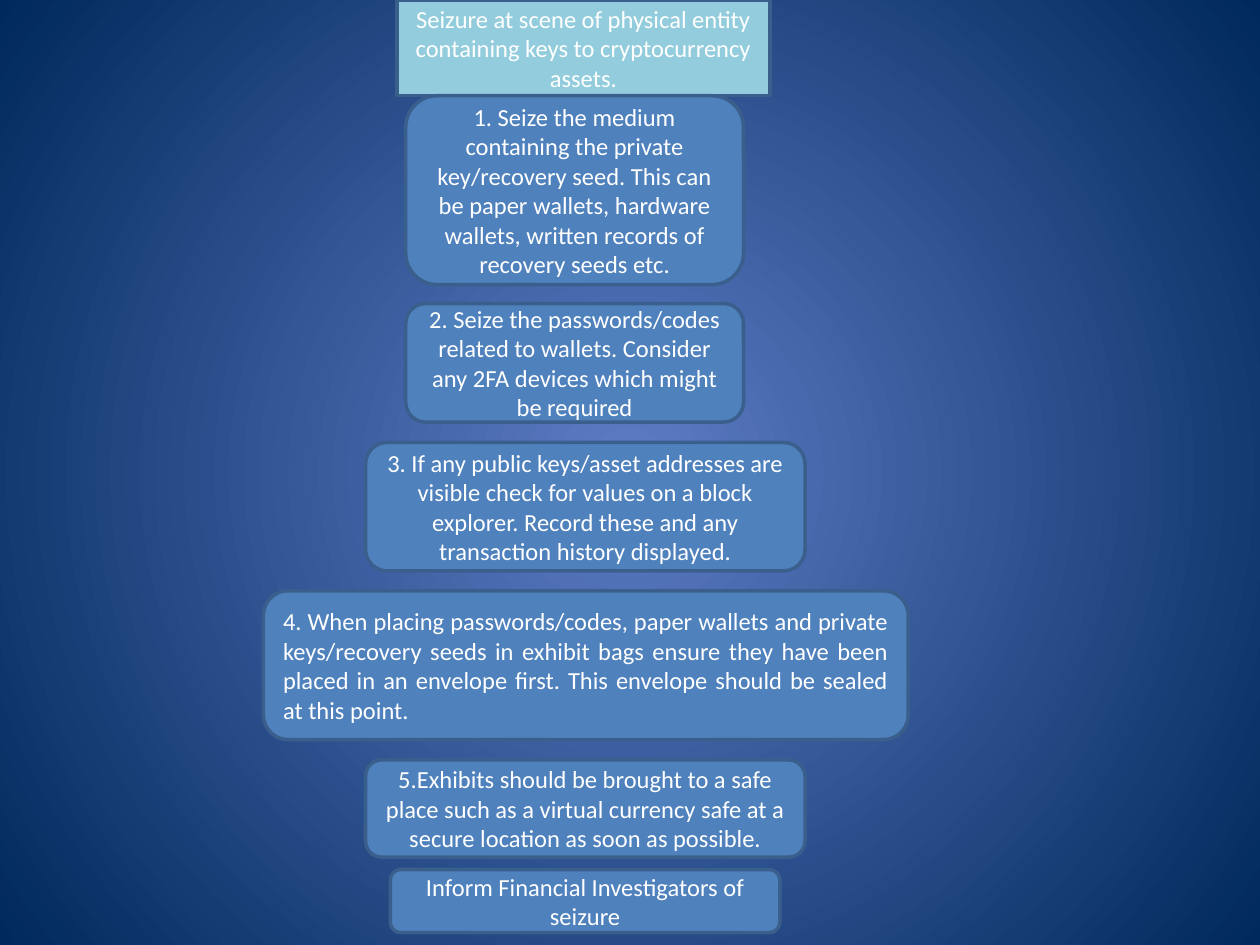
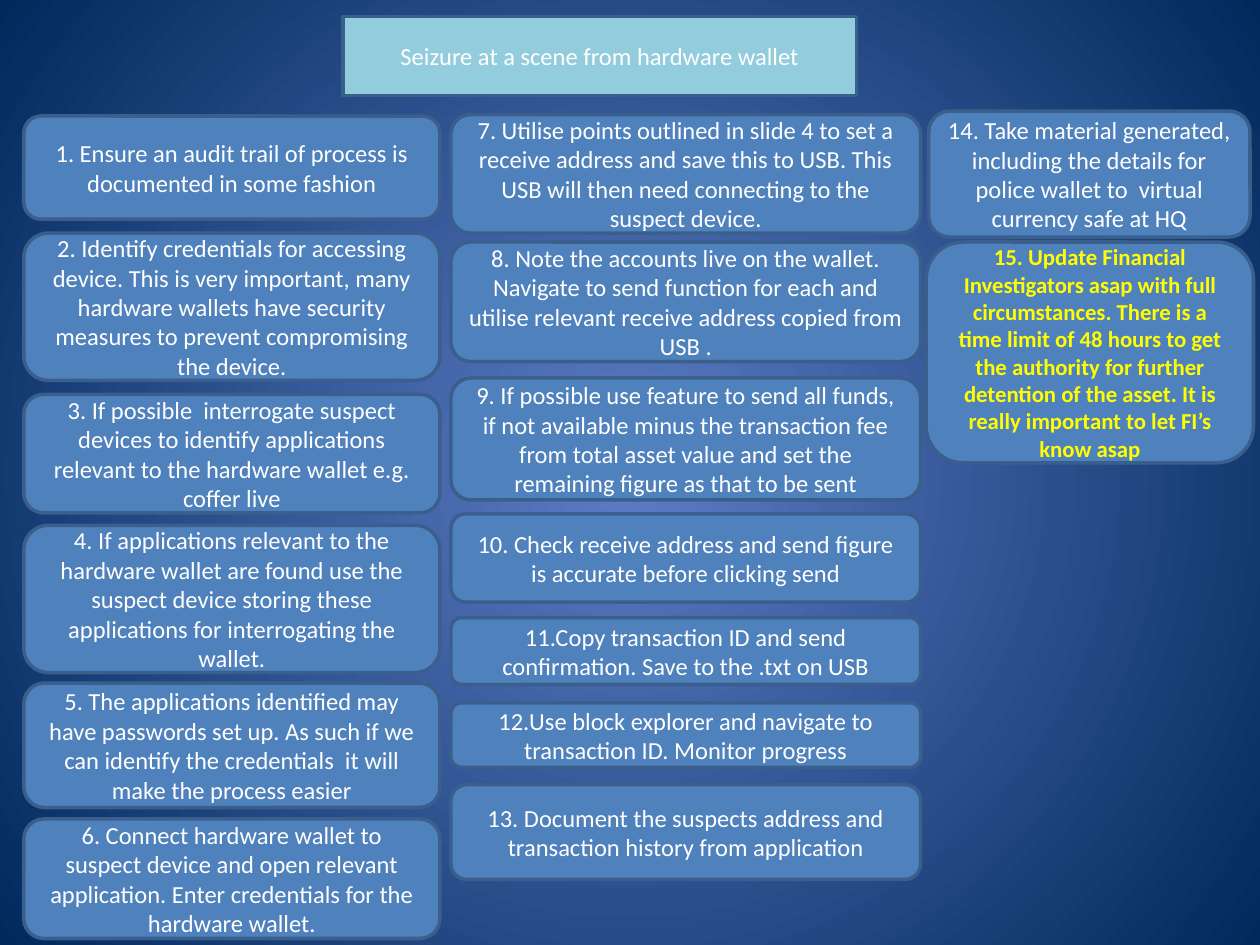
from dataclasses import dataclass

from lxml.etree import SubElement
from pptx import Presentation
from pptx.dml.color import RGBColor
from pptx.enum.shapes import MSO_SHAPE
from pptx.enum.text import MSO_ANCHOR, MSO_AUTO_SIZE, PP_ALIGN
from pptx.oxml.ns import qn
from pptx.util import Cm, Pt


@dataclass(frozen=True)
class Theme:
    font: str = "Calibri"
    body_size: float = 14
    alert_size: float = 13
    line_width: float = 2
    glow: str = "5E7CC5"
    navy: str = "00295C"
    heading: str = "93CDDD"
    step: str = "4F81BD"
    outline: str = "3A5F8C"
    text: str = "FFFFFF"
    alert: str = "FFFF00"


THEME = Theme()
TITLE_ONLY = 5

# Slide 1: left, top, width, height in cm, then wording
SCENE_STEPS = [
    (8.18, 1.93, 6.81, 3.81, "1. Seize the medium containing the private key/recovery seed. "
     "This can be paper wallets, hardware wallets, written records of recovery seeds etc."),
    (8.18, 6.12, 6.81, 2.39, "2. Seize the passwords/codes related to wallets. "
     "Consider any 2FA devices which might be required"),
    (7.37, 8.92, 8.86, 2.59, "3. If any public keys/asset addresses are visible check for values "
     "on a block explorer. Record these and any transaction history displayed."),
    (5.31, 11.91, 13, 3, "4. When placing passwords/codes, paper wallets and private "
     "keys/recovery seeds in exhibit bags ensure they have been placed in an envelope first. "
     "This envelope should be sealed at this point."),
    (7.37, 15.32, 8.86, 1.96, "5.Exhibits should be brought to a safe place such as a virtual "
     "currency safe at a secure location as soon as possible."),
    (7.87, 17.53, 7.85, 1.27, "Inform Financial Investigators of seizure"),
]
JUSTIFIED_STEP = 3

# Slide 2: top and height in cm, then wording, for each column
ACCESS_STEPS = [
    (2.34, 2.08, "1. Ensure an audit trail of process is documented in some fashion"),
    (4.7, 2.97, "2. Identify credentials for accessing device. This is very important, many "
     "hardware wallets have security measures to prevent compromising the device."),
    (7.95, 2.39, "3. If possible  interrogate suspect devices to identify applications "
     "relevant to the hardware wallet e.g. coffer live"),
    (10.59, 2.97, "4. If applications relevant to the hardware wallet are found use the suspect "
     "device storing these applications for interrogating the wallet."),
    (13.77, 2.51, "5. The applications identified may have passwords set up. As such if we can "
     "identify the credentials  it will make the process easier"),
    (16.51, 2.41, "6. Connect hardware wallet to suspect device and open relevant application. "
     "Enter credentials for the hardware wallet."),
]
TRANSFER_STEPS = [
    (2.31, 2.39, "7. Utilise points outlined in slide 4 to set a receive address and save this "
     "to USB. This USB will then need connecting to the suspect device."),
    (4.88, 2.41, "8. Note the accounts live on the wallet. Navigate to send function for each "
     "and utilise relevant receive address copied from USB ."),
    (7.62, 2.46, "9. If possible use feature to send all funds, if not available minus the "
     "transaction fee from total asset value and set the remaining figure as that to be sent"),
    (10.36, 1.78, "10. Check receive address and send figure is accurate before clicking send"),
    (12.45, 1.35, "11.Copy transaction ID and send confirmation. Save to the .txt on USB"),
    (14.17, 1.3, "12.Use block explorer and navigate to transaction ID. Monitor progress"),
    (15.82, 1.91, "13. Document the suspects address and transaction history from application"),
]
STORAGE_STEP = ("14. Take material generated, including the details for police wallet to  "
                "virtual currency safe at HQ")
REPORT_STEP = ("15. Update Financial Investigators asap with full circumstances. There is a time "
               "limit of 48 hours to get the authority for further detention of the asset. "
               "It is really important to let FI’s know asap")


def color(value):
    return RGBColor.from_string(value)


def set_background(master):
    """Give every slide a radial gradient, light in the middle."""
    fill = master.background.fill
    fill.gradient()
    for stop, value in zip(fill.gradient_stops, (THEME.glow, THEME.navy)):
        stop.color.rgb = color(value)
    gradient = master.element.find(".//" + qn("a:gradFill"))
    gradient.remove(gradient.find(qn("a:lin")))
    radial = SubElement(gradient, qn("a:path"), path="circle")
    SubElement(radial, qn("a:fillToRect"), l="50000", t="50000", r="50000", b="50000")


def write_text(shape, text, size=THEME.body_size, ink=THEME.text, bold=False,
               align=PP_ALIGN.CENTER):
    frame = shape.text_frame
    frame.word_wrap = True
    frame.auto_size = MSO_AUTO_SIZE.NONE
    frame.vertical_anchor = MSO_ANCHOR.MIDDLE
    para = frame.paragraphs[0]
    para.alignment = align
    span = para.add_run()
    span.text = text
    span.font.name = THEME.font
    span.font.size = Pt(size)
    span.font.bold = bold
    span.font.color.rgb = color(ink)


def paint(shape, fill):
    shape.fill.solid()
    shape.fill.fore_color.rgb = color(fill)
    shape.line.color.rgb = color(THEME.outline)
    shape.line.width = Pt(THEME.line_width)


def add_titled_page(deck, text, left, top, width, height):
    """Add a slide whose title sits in a rounded heading box."""
    page = deck.slides.add_slide(deck.slide_layouts[TITLE_ONLY])
    title = page.shapes.title
    title.left, title.top = Cm(left), Cm(top)
    title.width, title.height = Cm(width), Cm(height)
    outline = SubElement(title.element.spPr, qn("a:prstGeom"), prst="roundRect")
    SubElement(outline, qn("a:avLst"))
    paint(title, THEME.heading)
    write_text(title, text)
    return page


def add_step(page, left, top, width, height, text, **text_format):
    box = page.shapes.add_shape(MSO_SHAPE.ROUNDED_RECTANGLE,
                                Cm(left), Cm(top), Cm(width), Cm(height))
    box.shadow.inherit = False
    paint(box, THEME.step)
    write_text(box, text, **text_format)


def add_column(page, left, width, steps):
    for top, height, text in steps:
        add_step(page, left, top, width, height, text)


def build_scene_page(deck):
    page = add_titled_page(
        deck, "Seizure at scene of physical entity containing keys to cryptocurrency assets.",
        8, 0, 7.52, 1.93)
    for index, step in enumerate(SCENE_STEPS):
        align = PP_ALIGN.JUSTIFY if index == JUSTIFIED_STEP else PP_ALIGN.CENTER
        add_step(page, *step, align=align)


def build_wallet_page(deck):
    page = add_titled_page(deck, "Seizure at a scene from hardware wallet",
                           6.91, 0.33, 10.36, 1.6)
    add_column(page, 0.48, 8.39, ACCESS_STEPS)
    add_column(page, 9.09, 9.47, TRANSFER_STEPS)
    # Closing steps, the last one highlighted
    add_step(page, 18.72, 2.24, 6.48, 2.54, STORAGE_STEP)
    add_step(page, 18.67, 4.88, 6.6, 4.45, REPORT_STEP,
             size=THEME.alert_size, ink=THEME.alert, bold=True)


def main():
    deck = Presentation()
    deck.slide_width, deck.slide_height = Cm(25.4), Cm(19.05)
    set_background(deck.slide_master)
    build_scene_page(deck)
    build_wallet_page(deck)
    deck.save("out.pptx")


if __name__ == "__main__":
    main()
